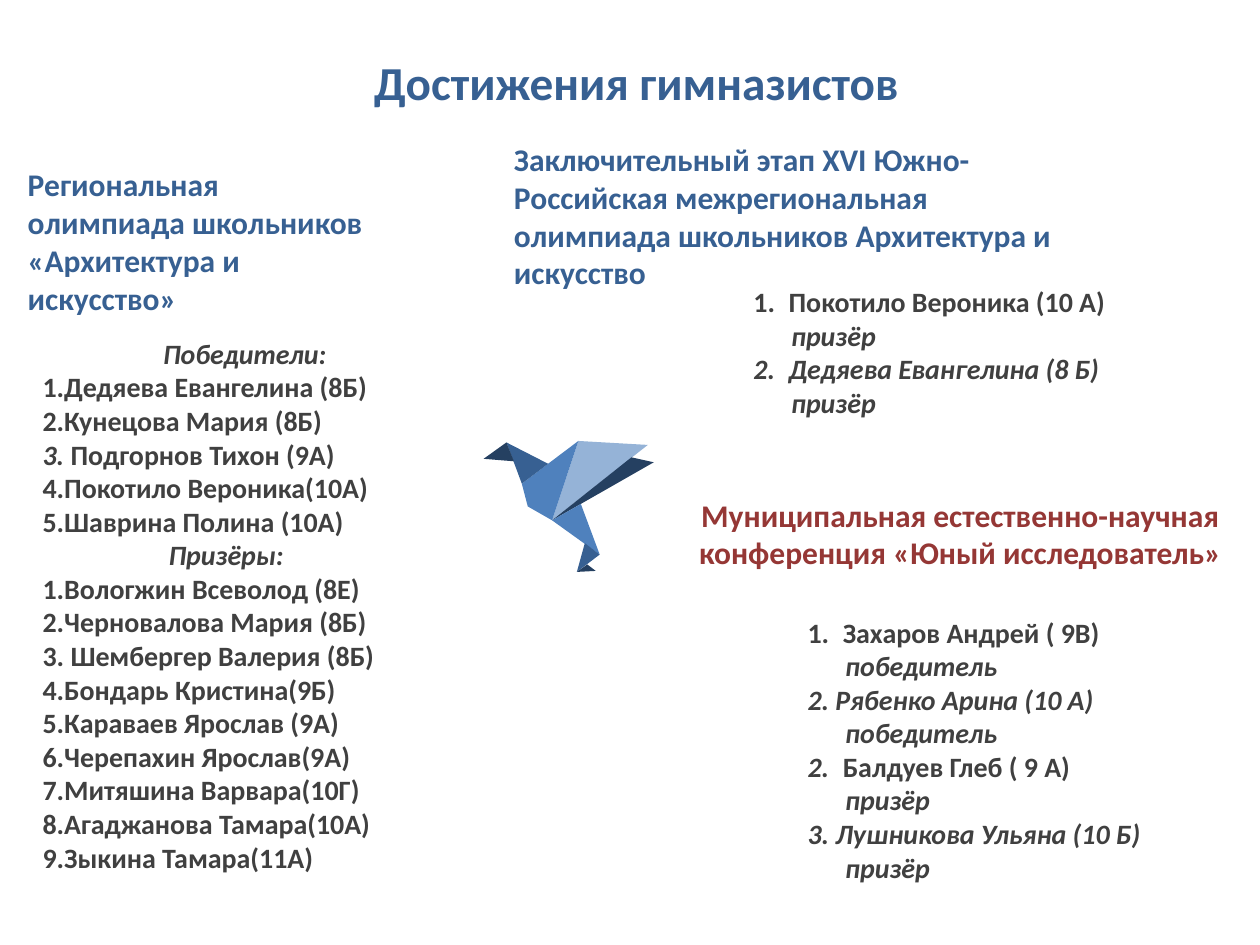
"""Build the slide of school olympiad and conference results."""
from lxml.etree import SubElement
from pptx import Presentation
from pptx.dml.color import RGBColor as Rgb
from pptx.enum.text import MSO_ANCHOR as Anchor, PP_ALIGN as Align
from pptx.oxml.ns import qn
from pptx.util import Cm, Pt

NAVY = Rgb(0x25, 0x40, 0x61)
BLUE = Rgb(0x37, 0x60, 0x92)
MID = Rgb(0x4F, 0x81, 0xBD)
PALE = Rgb(0x95, 0xB3, 0xD7)
RED = Rgb(0x95, 0x37, 0x35)
GREY = Rgb(0x40, 0x40, 0x40)

HANG = 0.71
MID_ROW = {"align": Align.CENTER}
SUB = {"left": 0.76}

TITLE = [("Достижения гимназистов", MID_ROW)]
REGION = [("Региональная олимпиада школьников «Архитектура и искусство»", {})]
FINAL = [("Заключительный этап XVI Южно-Российская межрегиональная "
          "олимпиада школьников Архитектура и искусство", {})]
TOWN = [("Муниципальная естественно-научная конференция "
         "«Юный исследователь»", MID_ROW)]
WINNERS = [
    "1.Дедяева Евангелина (8Б)",
    "2.Кунецова Мария (8Б)",
    "_3. _Подгорнов Тихон (9А)",
    "4.Покотило Вероника(10А)",
    "5.Шаврина Полина (10А)",
]
PRIZES = [
    "1.Вологжин Всеволод (8Е)",
    "2.Черновалова Мария (8Б)",
    "3. Шембергер Валерия (8Б)",
    "4.Бондарь Кристина(9Б)",
    "5.Караваев Ярослав (9А)",
    "6.Черепахин Ярослав(9А)",
    "7.Митяшина Варвара(10Г)",
    "8.Агаджанова Тамара(10А)",
    "9.Зыкина Тамара(11А)",
]
NAMES = (
    [("_Победители:_", MID_ROW)] + [(name, {}) for name in WINNERS]
    + [("_Призёры:_", {"left": 2.54})] + [(name, {}) for name in PRIZES]
)
FINALISTS = [
    ("Покотило Вероника (10 А)", {"num": 1}),
    ("_призёр_", SUB),
    ("_Дедяева Евангелина (8 Б)_", {"num": 2}),
    ("_призёр_", SUB),
]
YOUNG = [
    ("Захаров Андрей ( 9В)", {"num": 1}),
    ("_победитель_", SUB),
    ("_2. Рябенко Арина (10 А)_", {}),
    ("_победитель_", SUB),
    ("_2.\t_Балдуев Глеб ( 9 А)", {"left": HANG, "first": -HANG}),
    ("_призёр_", SUB),
    ("_3. Лушникова Ульяна (10 Б)_", {}),
    ("_призёр_", SUB),
]

HEAD = {"size": 18, "color": BLUE, "anchor": Anchor.BOTTOM}
LIST = {"size": 16, "color": GREY}
BOXES = [
    ((1.5, 1.07, 22.66, 2.36), TITLE, {"size": 27, "color": BLUE, "pad": (0, 0)}),
    ((0.56, 3.18, 7.01, 3.33), REGION, HEAD),
    ((0.86, 6.65, 8.15, 12.57), NAMES, LIST),
    ((12.83, 9.86, 13.06, 1.8), TOWN,
     {"size": 18, "color": RED, "pad": (0.25, 0.13)}),
    ((16.28, 12.27, 7.21, 6.4), YOUNG, LIST),
    ((10.36, 2.67, 11.18, 3.33), FINAL, HEAD),
    ((15.19, 5.61, 7.52, 3.68), FINALISTS, LIST),
]

POINTS = {
    "back": (11.66, 8.89), "tip": (13.06, 8.97), "belly": (11.13, 10.49),
    "neck": (10.52, 9.75), "chest": (10.64, 10.21), "crown": (10.21, 8.92),
    "nape": (11.05, 9.35), "beak": (9.75, 9.25), "jaw": (10.36, 9.3),
    "far": (13.18, 9.32), "inner": (12.73, 9.22), "tail": (12.09, 11.18),
    "hip": (11.71, 10.16), "foot": (11.63, 11.53), "shin": (11.79, 10.95),
    "toe": (12.01, 11.51), "heel": (11.84, 11.38),
}
BIRD = [
    ("back tip belly", PALE),
    ("neck back belly chest", MID),
    ("crown nape neck", BLUE),
    ("beak crown jaw", NAVY),
    ("far inner belly", NAVY),
    ("tail hip belly", MID),
    ("foot shin tail", BLUE),
    ("toe heel foot", NAVY),
]


def set_row(para, left=0, first=0, num=None, align=Align.LEFT):
    """Set alignment, indents and numbering of one paragraph."""
    para.alignment = align
    if num:
        left, first = HANG, -HANG
    props = para._p.get_or_add_pPr()
    props.set("marL", str(Cm(left)))
    props.set("indent", str(Cm(first)))
    if num:
        SubElement(props, qn("a:buFont"), typeface="+mj-lt")
        SubElement(props, qn("a:buAutoNum"), type="arabicPeriod", startAt=str(num))


def add_text(slide, box, rows, size, color, anchor=Anchor.TOP, pad=(0, 0.13)):
    """Add a text box; underscores enclose italic parts."""
    frame = slide.shapes.add_textbox(*map(Cm, box)).text_frame
    frame.word_wrap = True
    frame.vertical_anchor = anchor
    frame.margin_left = frame.margin_right = Cm(pad[0])
    frame.margin_top = frame.margin_bottom = Cm(pad[1])
    for i, (text, form) in enumerate(rows):
        para = frame.add_paragraph() if i else frame.paragraphs[0]
        set_row(para, **form)
        for j, part in enumerate(text.split("_")):
            if part:
                run = para.add_run()
                run.text = part
                font = run.font
                font.name, font.size = "Calibri", Pt(size)
                font.bold, font.italic = True, j % 2 == 1
                font.color.rgb = color


def add_facet(slide, names, color):
    """Add one flat facet of the paper bird."""
    start, *rest = [tuple(map(Cm, POINTS[name])) for name in names.split()]
    pen = slide.shapes.build_freeform(*start)
    pen.add_line_segments(rest, close=True)
    shape = pen.convert_to_shape()
    shape.shadow.inherit = False
    shape.fill.solid()
    shape.fill.fore_color.rgb = color
    shape.line.fill.background()


def main():
    """Build and save the slide."""
    deck = Presentation()
    deck.slide_width, deck.slide_height = Cm(25.4), Cm(19.05)
    slide = deck.slides.add_slide(deck.slide_layouts[6])
    for names, color in BIRD:
        add_facet(slide, names, color)
    for box, rows, form in BOXES:
        add_text(slide, box, rows, **form)
    deck.save("out.pptx")


if __name__ == "__main__":
    main()
